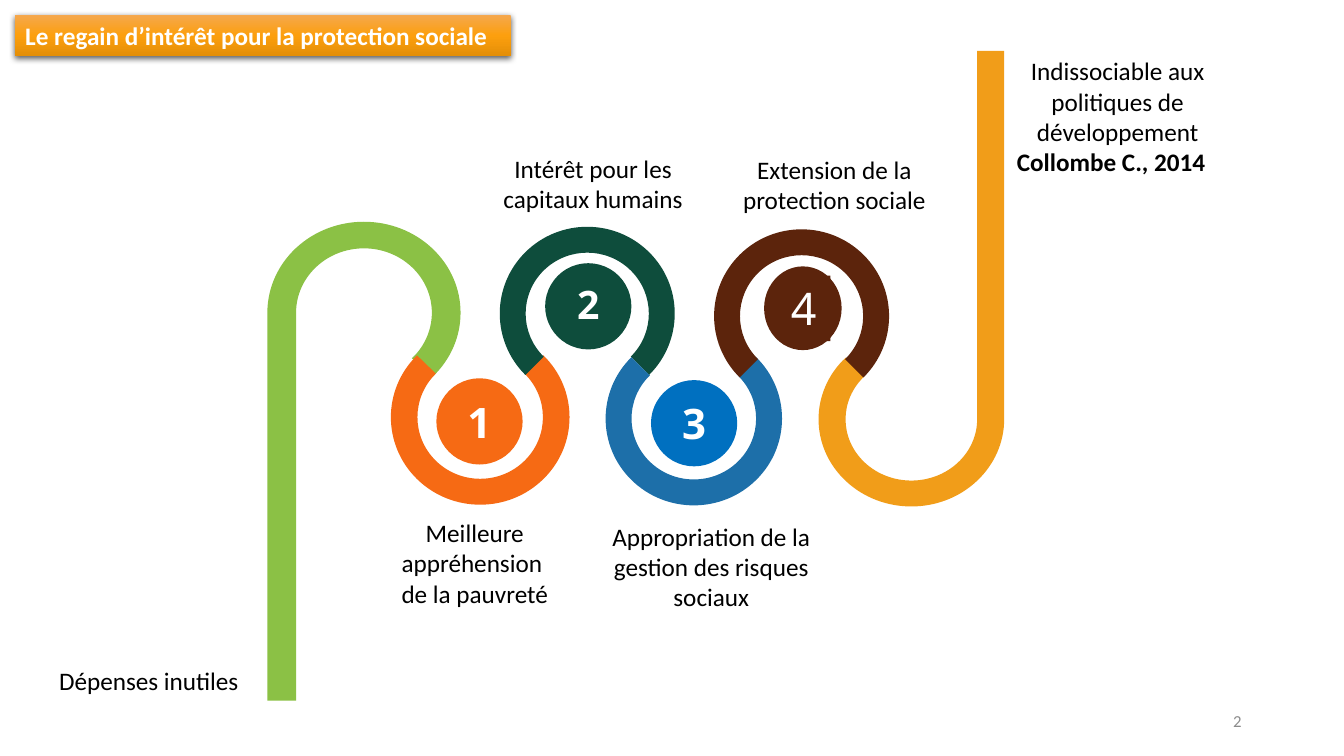
from dataclasses import dataclass
from math import cos, radians, sin, tan

from lxml import etree
from pptx import Presentation
from pptx.dml.color import RGBColor
from pptx.enum import shapes, text
from pptx.oxml import ns
from pptx.util import Pt


@dataclass(frozen=True)
class Theme:
    font: str = "Calibri"
    digit: str = "Noto Sans"
    body: int = 18
    small: int = 12
    white: str = "FFFFFF"
    black: str = "000000"
    gray: str = "8C8C8C"
    lime: str = "8BC145"
    orange: str = "F66A14"
    pine: str = "0E4D3C"
    blue: str = "1D6FA9"
    azure: str = "0070C0"
    brown: str = "5C240C"
    gold: str = "F19D19"
    banner: tuple = ((0, "F5A84E"), (50, "FC9F0E"), (100, "E58F07"))


T = Theme()
CENTER = text.PP_ALIGN.CENTER
TOP, MIDDLE = text.MSO_ANCHOR.TOP, text.MSO_ANCHOR.MIDDLE


def write(para, words, size=T.body, color=T.black, font=T.font, bold=False, align=CENTER):
    para.alignment = align
    run = para.add_run()
    run.text = words
    run.font.size, run.font.name, run.font.bold = Pt(size), font, bold
    run.font.color.rgb = RGBColor.from_string(color)


def paint(shape, color):
    shape.shadow.inherit = False
    shape.fill.solid()
    shape.fill.fore_color.rgb = RGBColor.from_string(color)
    shape.line.fill.background()


def title(slide, box):
    bar = slide.shapes.title
    bar.left, bar.top, bar.width, bar.height = map(Pt, box)
    frame = bar.text_frame
    frame.word_wrap = True
    frame.auto_size = text.MSO_AUTO_SIZE.NONE
    frame.vertical_anchor = MIDDLE
    write(frame.paragraphs[0], "Le regain d’intérêt pour la protection sociale",
          color=T.white, bold=True, align=text.PP_ALIGN.LEFT)
    # Gradient and drop shadow
    stops = "".join(f'<a:gs pos="{pos * 1000}"><a:srgbClr val="{color}"/></a:gs>'
                    for pos, color in T.banner)
    tree = etree.fromstring(
        f'<a:fx {ns.nsdecls("a")}><a:gradFill><a:gsLst>{stops}</a:gsLst>'
        '<a:lin ang="5400000" scaled="0"/></a:gradFill><a:effectLst>'
        '<a:outerShdw blurRad="57150" dist="19050" dir="5400000" algn="ctr" rotWithShape="0">'
        f'<a:srgbClr val="{T.black}"><a:alpha val="63000"/></a:srgbClr>'
        '</a:outerShdw></a:effectLst></a:fx>')
    for part in list(tree):
        bar.element.spPr.append(part)


def arc(cx, cy, rx, ry, knots):
    """Bezier points through the knot angles: one start, then three per piece."""
    def spot(turn, pull=0):
        return (cx + rx * (cos(turn) - pull * sin(turn)),
                cy + ry * (sin(turn) + pull * cos(turn)))

    turns = [radians(knot) for knot in knots]
    dots = [spot(turns[0])]
    for a, b in zip(turns, turns[1:]):
        pull = 4 / 3 * tan((b - a) / 4)
        dots += [spot(a, pull), spot(b, -pull), spot(b)]
    return dots


def curve(shape, starts):
    """Join each three line steps that begin at the given places into a curve."""
    steps = shape.element.findall(".//" + ns.qn("a:lnTo"))
    for i in starts:
        first = steps[i]
        first.tag = ns.qn("a:cubicBezTo")
        for step in steps[i + 1:i + 3]:
            first.append(step[0])
            step.getparent().remove(step)


def road(slide, box):
    left, top, wide, high = box
    # Centre, outer radii, bands, start and end angle, end of straight leg, colour
    bends = [
        (460, 263.5, 66.3, 62.3, 19.3, 18.5, 0, 225, 0.4, T.gold),
        (69, 187.4, 69, 65, 20.5, 19, 180, 405, high, T.lime),
        (152, 262, 63.8, 62.5, 19, 18.5, -45, 225, None, T.orange),
        (228.5, 188, 62.5, 62, 18.5, 18.5, 135, 405, None, T.pine),
        (304.6, 263, 63, 62, 18.5, 18.5, -45, 225, None, T.blue),
        (381.6, 189.8, 62.5, 62, 18.5, 18.5, 135, 405, None, T.brown),
    ]
    for cx, cy, rx, ry, dx, dy, start, end, leg, color in bends:
        knots = [start] + [a for a in (end - 180, end - 90, end) if a > start]
        outer = arc(left + cx, top + cy, rx, ry, knots)
        inner = arc(left + cx, top + cy, rx - dx, ry - dy, knots[::-1])
        dots = outer + inner
        if leg is not None:
            dots += [(inner[-1][0], top + leg), (outer[0][0], top + leg)]
        dots = [(Pt(x), Pt(y)) for x, y in dots]
        pen = slide.shapes.build_freeform(*dots[0])
        pen.add_line_segments(dots[1:], close=True)
        shape = pen.convert_to_shape()
        span = len(outer)
        curve(shape, [*range(0, span - 1, 3), *range(span, 2 * span - 1, 3)])
        paint(shape, color)


def badge(slide, kind, box, color, digit="", size=0, bold=True, right=0, base=0):
    shape = slide.shapes.add_shape(kind, *map(Pt, box))
    paint(shape, color)
    if digit:
        frame = shape.text_frame
        frame.margin_left = frame.margin_top = 0
        frame.margin_right, frame.margin_bottom = Pt(right), Pt(base)
        frame.word_wrap = True
        frame.vertical_anchor = MIDDLE
        write(frame.paragraphs[0], digit, size, T.white, T.digit, bold)


def badges(slide, box):
    left, top = box[:2]
    oval, rect = shapes.MSO_SHAPE.OVAL, shapes.MSO_SHAPE.RECTANGLE
    # Kind, centre, size, colour, digit, type size, bold, right and bottom inset
    marks = [
        (oval, 151.5, 265, 61.6, 61.6, T.orange, "1", 30, True),
        (oval, 229.2, 182.8, 61.6, 61.6, T.pine, "2", 28, True, 0, 4),
        (oval, 304.8, 266.3, 61.6, 61.6, T.azure, "3", 30, True),
        (oval, 382.5, 184.2, 55.4, 59.8, T.brown),
        (rect, 384.6, 184.3, 35, 46.8, T.brown, "4", 32, False, 3, 1),
    ]
    for kind, cx, cy, wide, high, *look in marks:
        spot = (left + cx - wide / 2, top + cy - high / 2, wide, high)
        badge(slide, kind, spot, *look)


def label(slide, box, lines, anchor=TOP, **look):
    frame = slide.shapes.add_textbox(*map(Pt, box)).text_frame
    frame.word_wrap = True
    frame.vertical_anchor = anchor
    for i, (words, bold) in enumerate(lines):
        para = frame.add_paragraph() if i else frame.paragraphs[0]
        write(para, words, bold=bold, **look)


def labels(slide, box):
    left, top = box[:2]
    notes = [
        (21.8, 471.6, 169, 29, [("Dépenses inutiles", False)]),
        (718.8, 36.2, 159, 94, [("Indissociable aux politiques de développement", False),
                                ("Collombe C., 2014\t", True)]),
        (257.8, 366, 162.7, 73, [("Meilleure appréhension ", False),
                                 ("de la pauvreté", False)]),
        (350.6, 105.8, 146, 51, [("Intérêt pour les capitaux humains", False)]),
        (422.8, 368.8, 170.6, 73,
         [("Appropriation de la gestion des risques sociaux", False)]),
        (518.6, 106.5, 154.8, 51, [("Extension de la protection sociale", False)]),
    ]
    for x, y, wide, high, lines in notes:
        label(slide, (left + x, top + y, wide, high), lines)


def main():
    deck = Presentation()
    deck.slide_width, deck.slide_height = Pt(960), Pt(540)
    slide = deck.slides.add_slide(deck.slide_layouts[5])
    track = (191, 36, 526, 464.4)
    road(slide, track)
    badges(slide, track)
    labels(slide, (0, 0, 960, 540))
    title(slide, (10.8, 10.8, 354, 29))
    # Page number
    label(slide, (678, 500.6, 216, 28.8), [("2", False)], MIDDLE,
          size=T.small, color=T.gray, align=text.PP_ALIGN.RIGHT)
    deck.save("out.pptx")


if __name__ == "__main__":
    main()
